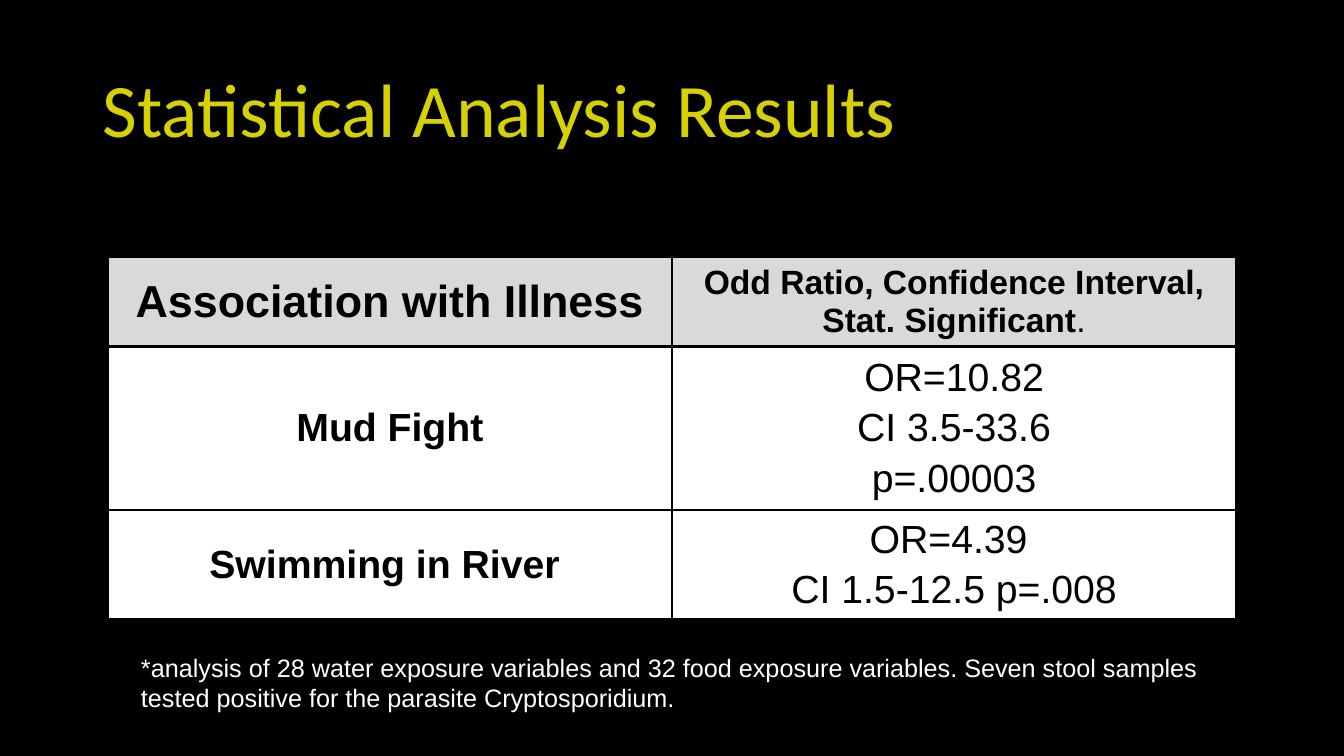
import lxml.etree
import pptx
import pptx.dml.color
import pptx.enum.text
import pptx.oxml.ns
import pptx.util


def color(value):
    return pptx.dml.color.RGBColor.from_string(value)


def add_borders(cell, value, width):
    properties = cell._tc.get_or_add_tcPr()
    for index, side in enumerate(("lnL", "lnR", "lnT", "lnB")):
        line = lxml.etree.Element(pptx.oxml.ns.qn(f"a:{side}"), w=str(pptx.util.Pt(width)))
        fill = lxml.etree.SubElement(line, pptx.oxml.ns.qn("a:solidFill"))
        lxml.etree.SubElement(fill, pptx.oxml.ns.qn("a:srgbClr"), val=value)
        properties.insert(index, line)


inches = pptx.util.Inches
points = pptx.util.Pt
middle = pptx.enum.text.MSO_ANCHOR.MIDDLE

presentation = pptx.Presentation()
presentation.slide_width = inches(13.33)
presentation.slide_height = inches(7.5)
slide = presentation.slides.add_slide(presentation.slide_layouts[5])
slide.background.fill.solid()
slide.background.fill.fore_color.rgb = color("000000")

title = slide.shapes.title
title.left, title.top, title.width, title.height = map(inches, (0.92, 0.4, 11.5, 1.45))
title.text_frame.text = "Statistical Analysis Results"
title.text_frame.vertical_anchor = middle
paragraph = title.text_frame.paragraphs[0]
paragraph.alignment = pptx.enum.text.PP_ALIGN.LEFT
paragraph.line_spacing = 0.9
paragraph.font.name = "Calibri"
paragraph.font.size = points(54)
paragraph.font.color.rgb = color("D6D100")

rows = [
    ("Association with Illness", "Odd Ratio, Confidence Interval, Stat. Significant"),
    ("Mud Fight", "OR=10.82\nCI 3.5-33.6\np=.00003"),
    ("Swimming in River ", "OR=4.39 \nCI 1.5-12.5 p=.008"),
]
row_heights = (0.89, 1.62, 1.09)
table = slide.shapes.add_table(
    len(rows), 2, inches(1.07), inches(2.55), inches(11.19), inches(sum(row_heights))
).table
table.first_row = False
table.horz_banding = False

for row_index, texts in enumerate(rows):
    table.rows[row_index].height = inches(row_heights[row_index])
    is_header = row_index == 0
    for column_index, text in enumerate(texts):
        cell = table.cell(row_index, column_index)
        cell.fill.solid()
        cell.fill.fore_color.rgb = color("D9D9D9" if is_header else "FFFFFF")
        add_borders(cell, "000000", 2.25)
        cell.vertical_anchor = middle
        cell.margin_left = cell.margin_right = inches(0.15)
        cell.margin_top = cell.margin_bottom = inches(0.06)
        cell.text_frame.text = text
        for paragraph_index, paragraph in enumerate(cell.text_frame.paragraphs):
            paragraph.alignment = pptx.enum.text.PP_ALIGN.CENTER
            paragraph.space_before = points(5 if paragraph_index else 0)
            paragraph.font.name = "Arial"
            paragraph.font.size = points((32, 24)[column_index] if is_header else 28)
            paragraph.font.bold = is_header or column_index == 0
            paragraph.font.color.rgb = color("000000")

full_stop = table.cell(0, 1).text_frame.paragraphs[0].add_run()
full_stop.text = "."
full_stop.font.bold = False

footnote = slide.shapes.add_textbox(inches(1.3), inches(6.42), inches(10.88), inches(0.71))
footnote.text_frame.word_wrap = True
footnote.text_frame.text = (
    "*analysis of 28 water exposure variables and 32 food exposure variables. "
    "Seven stool samples tested positive for the parasite Cryptosporidium."
)
paragraph = footnote.text_frame.paragraphs[0]
paragraph.font.name = "Arial"
paragraph.font.size = points(18)
paragraph.font.color.rgb = color("FFFFFF")

presentation.save("out.pptx")
